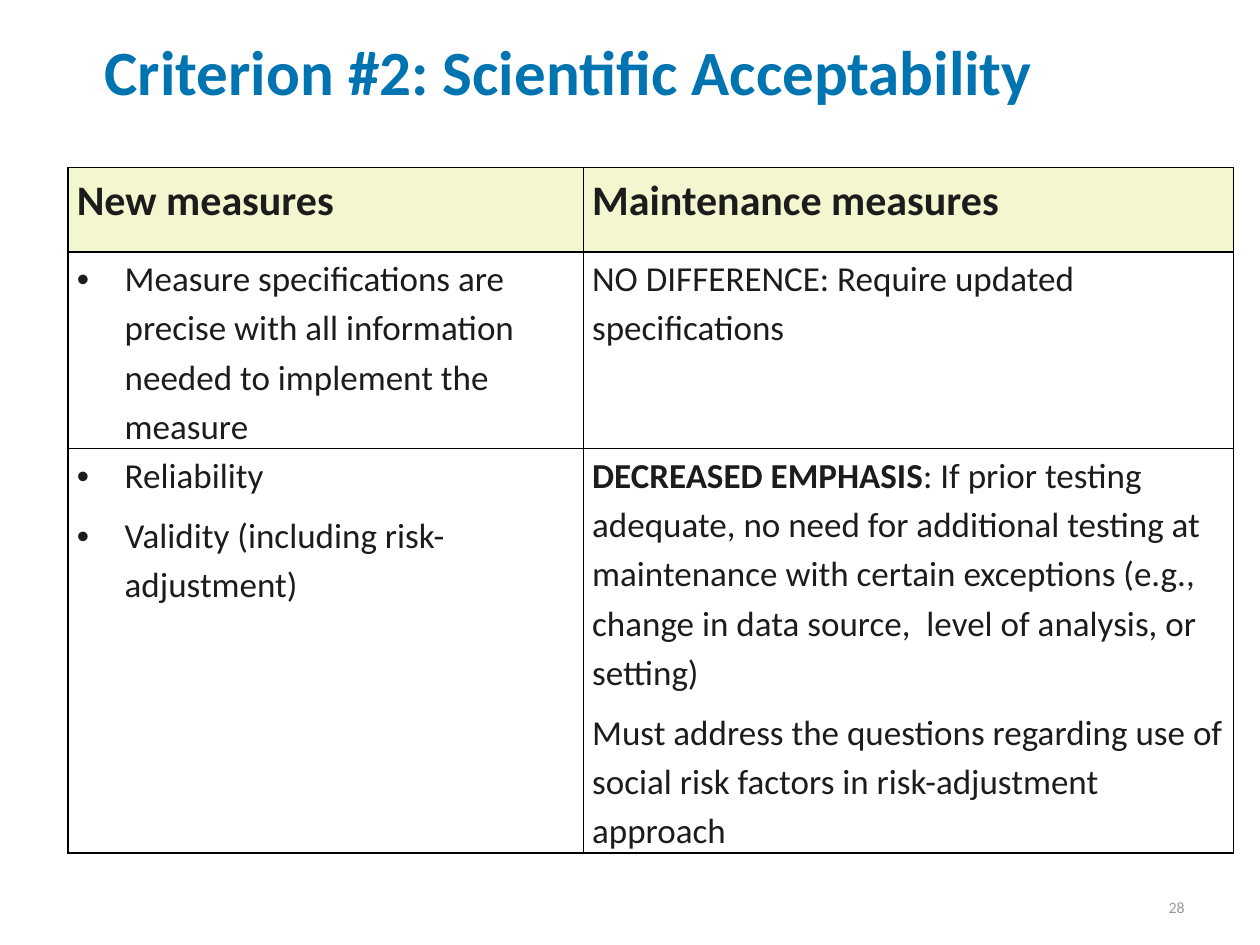
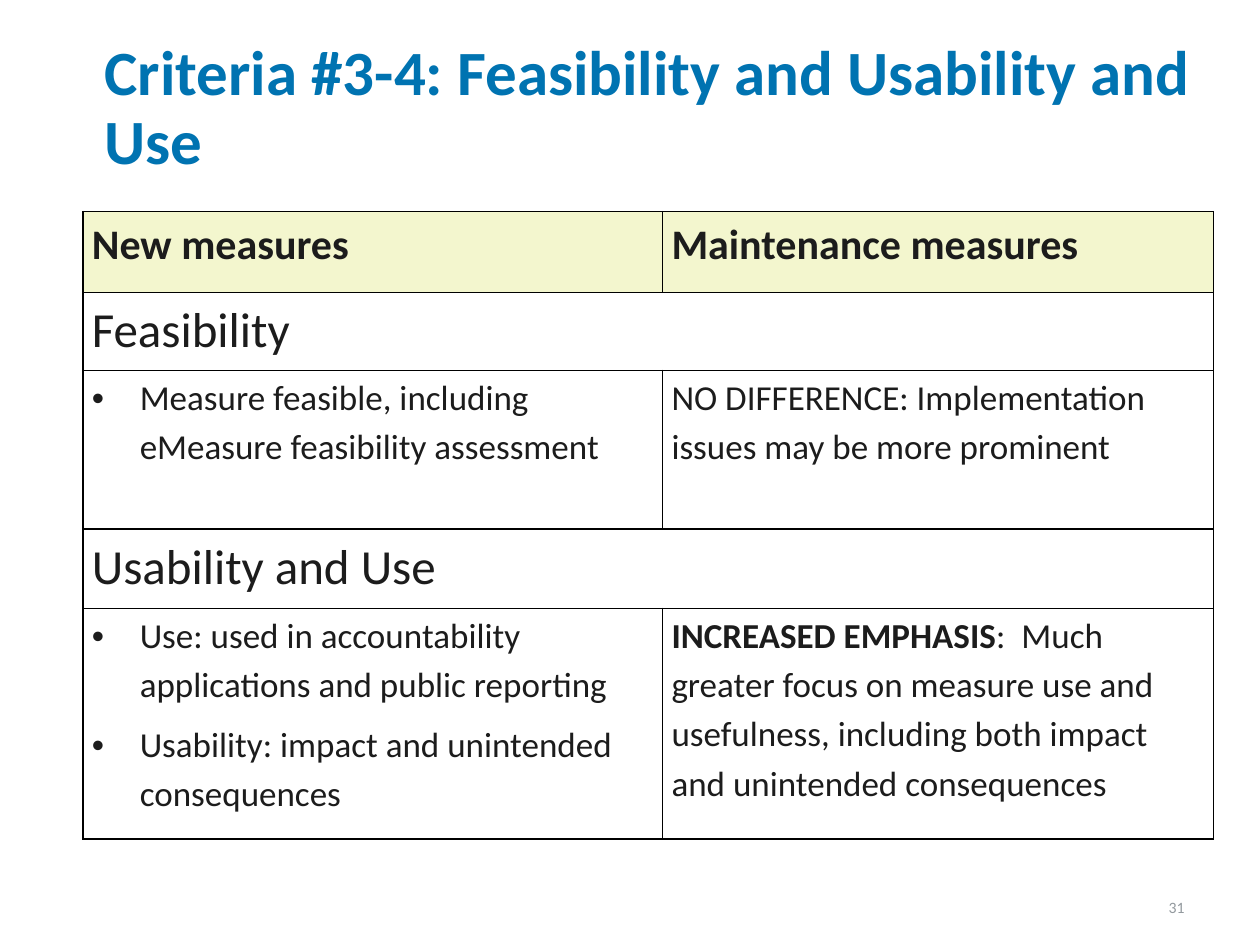
from pptx import Presentation
from pptx.dml.color import RGBColor
from pptx.enum.text import PP_ALIGN
from pptx.oxml.ns import qn
from pptx.util import Inches, Pt
from lxml.etree import SubElement

FONT = "Calibri"
BLUE = RGBColor(0x00, 0x73, 0xB1)
INK = RGBColor(0x1C, 0x1C, 0x1C)
GRAY = RGBColor(0x93, 0x99, 0x9E)
CREAM = RGBColor(0xF3, 0xF6, 0xCE)
BLACK = RGBColor(0, 0, 0)

HEADER = ["New measures", "Maintenance measures"]


def add_bullet(p, indent=0.38):
    pPr = p._p.get_or_add_pPr()
    pPr.set("marL", str(Inches(indent)))
    pPr.set("indent", str(-Inches(indent)))
    SubElement(pPr, qn("a:buFont"), typeface="Arial")
    SubElement(pPr, qn("a:buChar"), char="•")


def write(tf, text, size=20, color=INK, bold=False, align=PP_ALIGN.LEFT,
          spacing=1.15, after=6):
    tf.word_wrap = True
    for i, line in enumerate(text.split("\n")):
        p = tf.paragraphs[0] if i == 0 else tf.add_paragraph()
        if line.startswith("• "):
            add_bullet(p)
            line = line[2:]
        p.alignment = align
        p.line_spacing = spacing
        p.space_before = Pt(0)
        p.space_after = Pt(after)
        for j, part in enumerate(line.split("**")):
            if part:
                r = p.add_run()
                r.text = part
                r.font.name = FONT
                r.font.size = Pt(size)
                r.font.bold = bold or j % 2 == 1
                r.font.color.rgb = color


def set_borders(cell):
    tcPr = cell._tc.get_or_add_tcPr()
    for side in ("lnL", "lnR", "lnT", "lnB"):
        ln = SubElement(tcPr, qn("a:" + side), w=str(Pt(1)))
        fill = SubElement(ln, qn("a:solidFill"))
        SubElement(fill, qn("a:srgbClr"), val=str(BLACK))


def add_text_box(s, box, text, inset=None, **fmt):
    tf = s.shapes.add_textbox(*map(Inches, box)).text_frame
    if inset is not None:
        tf.margin_left = tf.margin_right = Inches(inset)
        tf.margin_top = tf.margin_bottom = Inches(inset)
    write(tf, text, spacing=fmt.pop("spacing", 1), after=0, **fmt)


def add_criteria_table(s, left, top, widths, heights, rows):
    rows = [HEADER] + rows
    frame = s.shapes.add_table(len(rows), len(widths), Inches(left), Inches(top),
                               Inches(sum(widths)), Inches(sum(heights)))
    table = frame.table
    table.first_row = table.horz_banding = False
    for column, width in zip(table.columns, widths):
        column.width = Inches(width)
    for i, texts in enumerate(rows):
        table.rows[i].height = Inches(heights[i])
        is_header, is_section = i == 0, len(texts) == 1
        if is_section:
            table.cell(i, 0).merge(table.cell(i, len(widths) - 1))
        for cell in table.rows[i].cells:
            set_borders(cell)
            cell.margin_left = cell.margin_right = Inches(0.07)
            cell.margin_top = cell.margin_bottom = 0
            if is_header:
                cell.fill.solid()
                cell.fill.fore_color.rgb = CREAM
            else:
                cell.fill.background()
        size = 24 if is_header else 28 if is_section else 20
        for j, text in enumerate(texts):
            write(table.cell(i, j).text_frame, text, size=size, bold=is_header)


def add_criteria_slide(prs, title, number, **table):
    s = prs.slides.add_slide(prs.slide_layouts[6])
    add_text_box(s, (0.83, 0.33, 8.67, 1.25), title, inset=0, size=36,
                 color=BLUE, bold=True, spacing=0.9)
    add_text_box(s, (7.78, 7.08, 1.72, 0.34), number, size=9, color=GRAY,
                 align=PP_ALIGN.RIGHT)
    add_criteria_table(s, **table)


def main():
    prs = Presentation()
    prs.slide_width, prs.slide_height = Inches(10), Inches(7.5)

    add_criteria_slide(
        prs, "Criterion #2: Scientific Acceptability", "28",
        left=0.54, top=1.33, widths=[4.09, 5.16], heights=[0.67, 1.56, 3.21],
        rows=[
            ["• Measure specifications are precise with all information "
             "needed to implement the measure",
             "NO DIFFERENCE: Require updated specifications"],
            ["• Reliability\n• Validity (including risk-adjustment)",
             "**DECREASED EMPHASIS**: If prior testing adequate, no need for "
             "additional testing at maintenance with certain exceptions (e.g., "
             "change in data source,  level of analysis, or setting)\n"
             "Must address the questions regarding use of social risk factors "
             "in risk-adjustment approach"],
        ])

    add_criteria_slide(
        prs, "Criteria #3-4: Feasibility and Usability and Use", "31",
        left=0.66, top=1.68, widths=[4.6, 4.37],
        heights=[0.64, 0.62, 1.26, 0.63, 1.83],
        rows=[
            ["Feasibility"],
            ["• Measure feasible, including eMeasure feasibility assessment",
             "NO DIFFERENCE: Implementation issues may be more prominent"],
            ["Usability and Use"],
            ["• Use: used in accountability applications and public reporting\n"
             "• Usability: impact and unintended consequences",
             "**INCREASED EMPHASIS**:  Much greater focus on measure use and "
             "usefulness, including both impact and unintended consequences"],
        ])

    prs.save("out.pptx")


if __name__ == "__main__":
    main()
